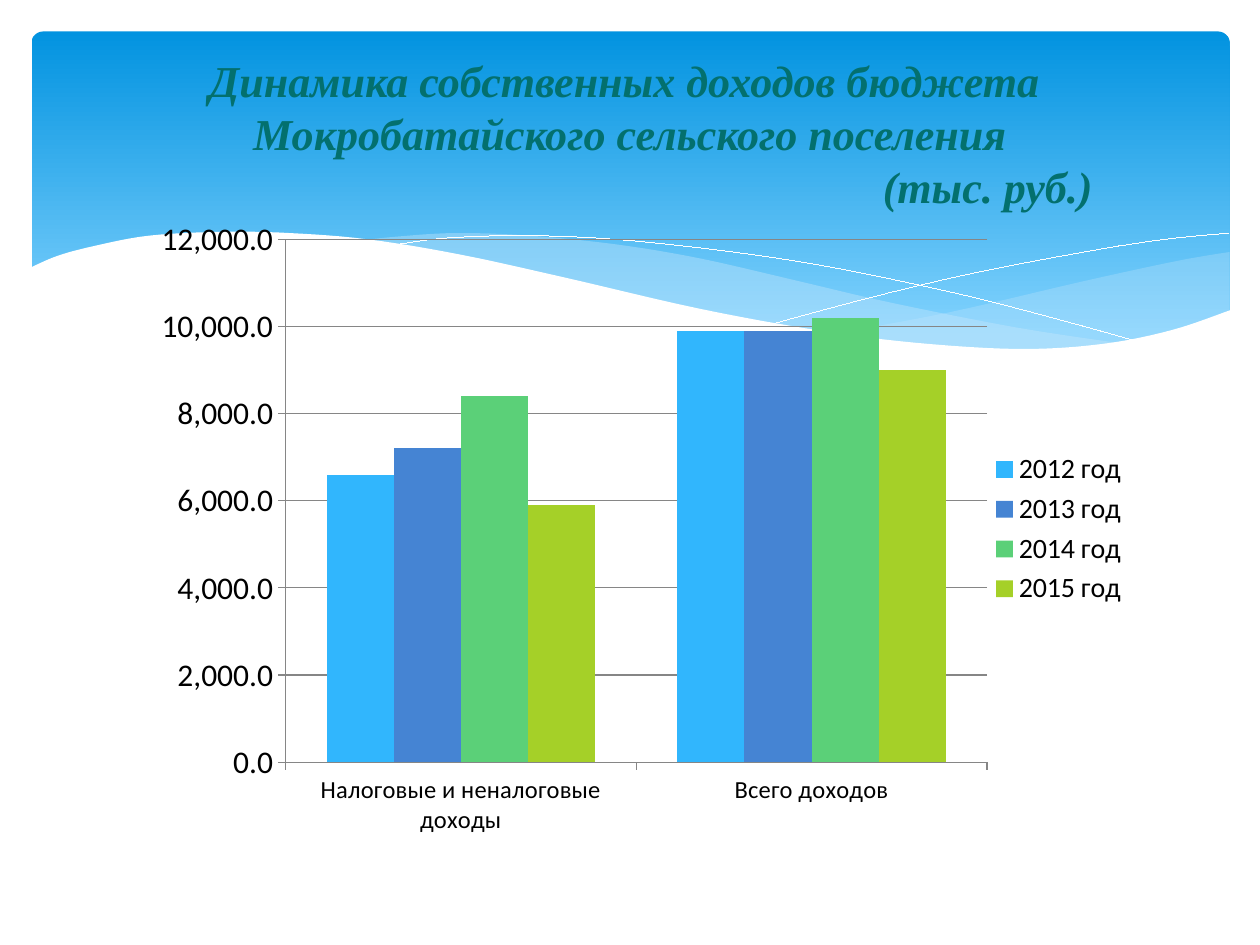
from dataclasses import dataclass

import lxml.etree
import pptx
import pptx.chart.data
import pptx.dml.color
import pptx.enum.chart
import pptx.enum.dml
import pptx.enum.shapes
import pptx.enum.text
import pptx.oxml
import pptx.oxml.ns
import pptx.util

Inches = pptx.util.Inches
Pt = pptx.util.Pt
RGBColor = pptx.dml.color.RGBColor
qn = pptx.oxml.ns.qn

WHITE = RGBColor(0xFF, 0xFF, 0xFF)
BLACK = RGBColor(0, 0, 0)
SKY_TOP = RGBColor(0x02, 0x93, 0xE0)
SKY_BOTTOM = RGBColor(0x83, 0xD3, 0xFE)
PALE_BLUE = RGBColor(0xC6, 0xE7, 0xFC)
TEAL = RGBColor(0x03, 0x70, 0x6E)
GRAY = RGBColor(0x86, 0x86, 0x86)

Point = tuple[float, float]
Curve = list[Point]


@dataclass(frozen=True)
class Wave:
    curves: list[Curve]
    fill: RGBColor | None = None
    opacity: int = 100


@dataclass(frozen=True)
class Year:
    name: str
    values: tuple[float, float]
    color: RGBColor


@dataclass(frozen=True)
class TitleLine:
    text: str
    indent: float = 0


WAVES = [
    Wave([
        [(9.76, 2), (9.35, 2.07), (8.61, 2.23), (7.53, 2.48), (6.61, 2.65)],
        [(6.61, 2.65), (7.19, 2.72), (7.69, 2.77), (8.24, 2.77), (8.81, 2.73), (9.35, 2.62), (9.76, 2.47)],
    ], PALE_BLUE, 29),
    Wave([
        [(8.93, 2.73), (8.07, 2.6), (7.06, 2.4), (6.29, 2.22), (5.55, 2.05), (4.89, 1.94),
         (4.2, 1.87), (3.61, 1.85), (3.13, 1.88), (2.86, 1.91)],
        [(2.86, 1.91), (3.62, 2.03), (4.49, 2.22), (5.3, 2.4), (6.01, 2.55), (6.8, 2.68),
         (7.48, 2.76), (8.18, 2.78), (8.93, 2.73)],
    ], PALE_BLUE, 40),
    Wave([[(3.09, 1.95), (3.53, 1.89), (4.16, 1.87), (4.89, 1.9), (5.82, 2), (6.65, 2.13),
           (7.6, 2.33), (8.31, 2.51), (9.07, 2.72)]]),
    Wave([[(6.13, 2.57), (6.95, 2.35), (7.76, 2.16), (8.66, 1.99), (9.24, 1.9), (9.75, 1.85)]]),
    Wave([
        [(9.77, 2.46), (9.3, 2.62), (8.75, 2.73), (8.09, 2.77), (7.26, 2.72), (6.48, 2.62), (5.55, 2.45),
         (4.47, 2.2), (3.65, 2.02), (2.92, 1.9), (2.3, 1.85), (1.77, 1.84), (1.19, 1.87), (0.76, 1.95),
         (0.46, 2.03), (0.23, 2.13)],
        [(0.23, 2.13), (0.23, 3.29)],
        [(0.23, 3.29), (9.77, 3.29)],
    ], WHITE),
]

CATEGORIES = ["Налоговые и неналоговые доходы", "Всего доходов"]
YEARS = [
    Year("2012 год", (6600, 9900), RGBColor(0x31, 0xB6, 0xFD)),
    Year("2013 год", (7200, 9900), RGBColor(0x45, 0x84, 0xD3)),
    Year("2014 год", (8400, 10200), RGBColor(0x5B, 0xD0, 0x78)),
    Year("2015 год", (5900, 9000), RGBColor(0xA5, 0xD0, 0x28)),
]
TITLE = [
    TitleLine("Динамика собственных доходов бюджета "),
    TitleLine("Мокробатайского сельского поселения"),
    TitleLine("(тыс. руб.)", 5.68),
]


def smooth(curve: Curve, steps: int = 6) -> Curve:
    """Return points of a Catmull-Rom spline through the curve."""
    if len(curve) < 3:
        return curve
    ends = [curve[0], *curve, curve[-1]]
    points = [curve[0]]
    for a, b, c, d in zip(ends, ends[1:], ends[2:], ends[3:]):
        for step in range(1, steps + 1):
            t = step / steps
            x, y = (
                (2 * q + (r - p) * t + (2 * p - 5 * q + 4 * r - s) * t**2
                 + (3 * q - p - 3 * r + s) * t**3) / 2
                for p, q, r, s in zip(a, b, c, d)
            )
            points.append((x, y))
    return points


def draw_wave(page, wave: Wave) -> None:
    """Draw a filled wave, or a white hairline when it has no fill."""
    points = [(Inches(x), Inches(y)) for curve in wave.curves for x, y in smooth(curve)]
    builder = page.shapes.build_freeform(*points[0])
    builder.add_line_segments(points[1:], close=wave.fill is not None)
    shape = builder.convert_to_shape()
    shape.shadow.inherit = False
    if wave.fill is None:
        shape.fill.background()
        shape.line.color.rgb = WHITE
        shape._element.spPr.find(qn("a:ln")).set("w", "0")
        return
    shape.fill.solid()
    shape.fill.fore_color.rgb = wave.fill
    shape.line.fill.background()
    if wave.opacity < 100:
        color = shape.fill._xPr.find(".//" + qn("a:srgbClr"))
        lxml.etree.SubElement(color, qn("a:alpha")).set("val", str(wave.opacity * 1000))


def draw_sky(page) -> None:
    """Draw the rounded gradient panel."""
    sky = page.shapes.add_shape(
        pptx.enum.shapes.MSO_SHAPE.ROUNDED_RECTANGLE, Inches(0.25), Inches(0.25), Inches(9.51), Inches(2.7))
    sky.adjustments[0] = 0.034
    sky.shadow.inherit = False
    sky.line.fill.background()
    sky.fill.gradient()
    sky.fill.gradient_angle = 270
    for stop, color, position in zip(sky.fill.gradient_stops, (SKY_TOP, SKY_BOTTOM), (0, 0.9)):
        stop.color.rgb = color
        stop.position = position


def place_plot(chart, x: float, y: float, width: float, height: float) -> None:
    """Fix the inner plot area as fractions of the chart."""
    plot_area = chart._chartSpace.chart.plotArea
    for old in plot_area.findall(qn("c:layout")):
        plot_area.remove(old)
    layout = lxml.etree.Element(qn("c:layout"))
    manual = lxml.etree.SubElement(layout, qn("c:manualLayout"))
    settings = {"layoutTarget": "inner", "xMode": "edge", "yMode": "edge", "x": x, "y": y, "w": width, "h": height}
    for name, value in settings.items():
        lxml.etree.SubElement(manual, qn("c:" + name)).set("val", str(value))
    plot_area.insert(0, layout)


def draw_chart(page) -> None:
    """Draw the clustered income columns."""
    data = pptx.chart.data.CategoryChartData(number_format="#,##0.0")
    data.categories = CATEGORIES
    for year in YEARS:
        data.add_series(year.name, year.values)
    chart = page.shapes.add_chart(
        pptx.enum.chart.XL_CHART_TYPE.COLUMN_CLUSTERED,
        Inches(0.95), Inches(1.7), Inches(8.1), Inches(5), data).chart
    chart.has_title = False
    chart.font.name = "Calibri"
    chart.font.size = Pt(18)
    chart.font.color.rgb = BLACK
    place_plot(chart, 13 / 80, 0.04, 11 / 16, 0.83)
    plot = chart.plots[0]
    plot.gap_width = 122
    plot.overlap = 0
    plot.vary_by_categories = False
    for series, year in zip(plot.series, YEARS):
        series.format.fill.solid()
        series.format.fill.fore_color.rgb = year.color
    for axis in (chart.category_axis, chart.value_axis):
        axis.format.line.color.rgb = GRAY
        axis.major_tick_mark = pptx.enum.chart.XL_TICK_MARK.OUTSIDE
    chart.category_axis.tick_labels.font.size = Pt(14)
    chart.value_axis.minimum_scale = 0
    chart.value_axis.maximum_scale = 12000
    chart.value_axis.major_unit = 2000
    chart.value_axis.tick_labels.number_format = "#,##0.0"
    chart.value_axis.tick_labels.number_format_is_linked = False
    chart.value_axis.major_gridlines.format.line.color.rgb = GRAY
    chart.has_legend = True
    chart.legend.position = pptx.enum.chart.XL_LEGEND_POSITION.RIGHT
    chart.legend.include_in_layout = False
    chart.legend.font.size = Pt(16)


def draw_title(page) -> None:
    """Write the three title lines."""
    box = page.shapes.add_textbox(Inches(0.5), Inches(0.37), Inches(9), Inches(1.37))
    frame = box.text_frame
    frame.word_wrap = True
    frame.vertical_anchor = pptx.enum.text.MSO_ANCHOR.MIDDLE
    for index, line in enumerate(TITLE):
        para = frame.add_paragraph() if index else frame.paragraphs[0]
        para.alignment = pptx.enum.text.PP_ALIGN.CENTER
        para._p.get_or_add_pPr().set("marL", str(Inches(line.indent)))
        span = para.add_run()
        span.text = line.text
        span.font.name = "Times New Roman"
        span.font.size = Pt(25.2)
        span.font.bold = span.font.italic = True
        span.font.color.rgb = TEAL


def main() -> None:
    """Build the income slide."""
    deck = pptx.Presentation()
    deck.slide_width, deck.slide_height = Inches(10), Inches(7.5)
    page = deck.slides.add_slide(deck.slide_layouts[6])
    draw_sky(page)
    for wave in WAVES:
        draw_wave(page, wave)
    draw_chart(page)
    draw_title(page)
    deck.save("out.pptx")


if __name__ == "__main__":
    main()
